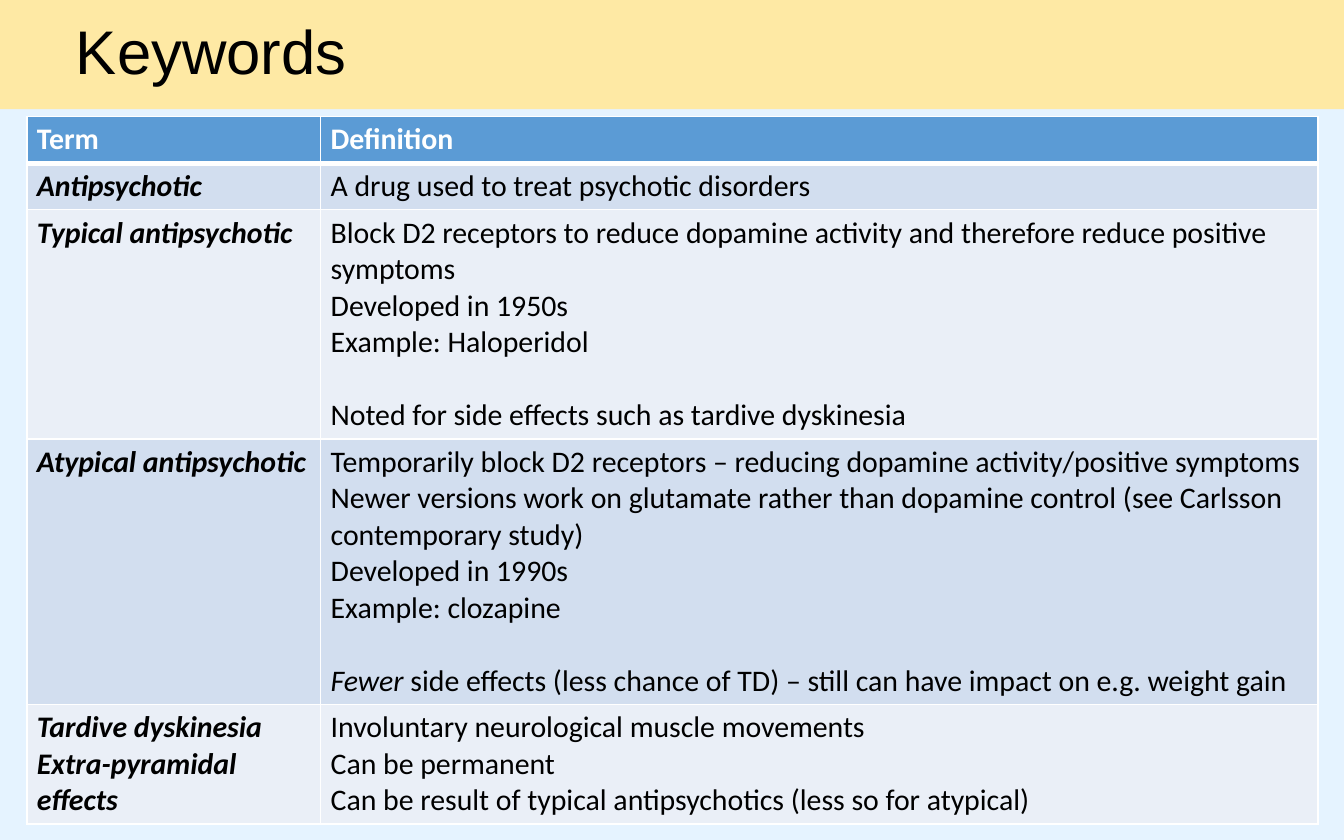
from dataclasses import dataclass

from lxml.etree import SubElement
from pptx import Presentation
from pptx.dml.color import RGBColor
from pptx.enum.text import MSO_ANCHOR as Anchor, MSO_AUTO_SIZE as AutoSize, PP_ALIGN as Align
from pptx.oxml.ns import qn
from pptx.util import Pt


@dataclass(frozen=True)
class Theme:
    background: str = "E5F3FF"
    band: str = "FEE9A4"
    header: str = "5B9BD5"
    rows: tuple = ("D2DEEF", "EAEFF7")
    text: str = "000000"
    light: str = "FFFFFF"
    title_font: str = "Arial"
    body_font: str = "Calibri"
    title_size: float = 33
    body_size: float = 16
    gap: float = 19.5
    border: float = 1
    header_border: float = 3


@dataclass(frozen=True)
class Line:
    text: str
    emphasis: str = ""
    gap: bool = False


THEME = Theme()
SLIDE_WIDTH, SLIDE_HEIGHT = 720, 450
BAND_HEIGHT = 58.5
TABLE_LEFT, TABLE_TOP = 14.4, 62.4
COLUMN_WIDTHS = (157.4, 534.2)
ROW_HEIGHTS = (25, 25, 122.6, 142.2, 64)

HEADINGS = ("Term", "Definition")
KEYWORDS = (
    (
        [Line("Antipsychotic")],
        [Line("A drug used to treat psychotic disorders")],
    ),
    (
        [Line("Typical antipsychotic")],
        [
            Line("Block D2 receptors to reduce dopamine activity and therefore reduce positive symptoms"),
            Line("Developed in 1950s"),
            Line("Example: Haloperidol"),
            Line("Noted for side effects such as tardive dyskinesia", gap=True),
        ],
    ),
    (
        [Line("Atypical antipsychotic")],
        [
            Line("Temporarily block D2 receptors – reducing dopamine activity/positive symptoms"),
            Line("Newer versions work on glutamate rather than dopamine control (see Carlsson contemporary study)"),
            Line("Developed in 1990s"),
            Line("Example: clozapine"),
            Line(
                " side effects (less chance of TD) – still can have impact on e.g. weight gain",
                emphasis="Fewer",
                gap=True,
            ),
        ],
    ),
    (
        [Line("Tardive dyskinesia"), Line("Extra-pyramidal effects")],
        [
            Line("Involuntary neurological muscle movements"),
            Line("Can be permanent"),
            Line("Can be result of typical antipsychotics (less so for atypical)"),
        ],
    ),
)


def color(value):
    return RGBColor.from_string(value)


def paint(fill, value):
    fill.solid()
    fill.fore_color.rgb = color(value)


def format_font(font, name, size, value, bold=False, italic=False):
    font.name = name
    font.size = Pt(size)
    font.color.rgb = color(value)
    font.bold = bold
    font.italic = italic


def add_title(slide, text):
    title = slide.shapes.title
    title.left, title.top = Pt(0), Pt(0)
    title.width, title.height = Pt(SLIDE_WIDTH), Pt(BAND_HEIGHT)
    paint(title.fill, THEME.band)
    title.line.fill.background()
    frame = title.text_frame
    frame.text = text
    frame.auto_size = AutoSize.NONE
    frame.vertical_anchor = Anchor.MIDDLE
    frame.margin_left = Pt(40.7)
    frame.margin_top = frame.margin_bottom = Pt(2.7)
    paragraph = frame.paragraphs[0]
    paragraph.alignment = Align.LEFT
    paragraph.line_spacing = 0.9
    format_font(paragraph.runs[0].font, THEME.title_font, THEME.title_size, THEME.text)


def set_borders(cell, top, bottom):
    properties = cell._tc.get_or_add_tcPr()
    widths = {"a:lnL": THEME.border, "a:lnR": THEME.border, "a:lnT": top, "a:lnB": bottom}
    for position, (tag, width) in enumerate(widths.items()):
        line = SubElement(properties, qn(tag), w=str(Pt(width)))
        fill = SubElement(line, qn("a:solidFill"))
        SubElement(fill, qn("a:srgbClr"), val=THEME.light)
        properties.insert(position, line)


def write_lines(cell, lines, value, bold, italic):
    frame = cell.text_frame
    for index, line in enumerate(lines):
        paragraph = frame.add_paragraph() if index else frame.paragraphs[0]
        if line.gap:
            paragraph.space_before = Pt(THEME.gap)
        for text, emphasized in ((line.emphasis, True), (line.text, italic)):
            if text:
                run = paragraph.add_run()
                run.text = text
                format_font(run.font, THEME.body_font, THEME.body_size, value, bold, emphasized)


def fill_cell(cell, lines, fill, value, bold, italic, top, bottom):
    cell.margin_left = cell.margin_right = Pt(5.4)
    cell.margin_top = cell.margin_bottom = Pt(2.7)
    cell.vertical_anchor = Anchor.TOP
    paint(cell.fill, fill)
    set_borders(cell, top, bottom)
    write_lines(cell, lines, value, bold, italic)


def add_keyword_table(slide):
    table = slide.shapes.add_table(
        len(ROW_HEIGHTS), len(COLUMN_WIDTHS), Pt(TABLE_LEFT), Pt(TABLE_TOP),
        Pt(sum(COLUMN_WIDTHS)), Pt(sum(ROW_HEIGHTS)),
    ).table
    for column, width in zip(table.columns, COLUMN_WIDTHS):
        column.width = Pt(width)
    for row, height in zip(table.rows, ROW_HEIGHTS):
        row.height = Pt(height)
    for column, heading in enumerate(HEADINGS):
        fill_cell(table.cell(0, column), [Line(heading)], THEME.header, THEME.light,
                  True, False, THEME.border, THEME.header_border)
    for row, entry in enumerate(KEYWORDS, start=1):
        top = THEME.header_border if row == 1 else THEME.border
        for column, lines in enumerate(entry):
            is_term = column == 0
            fill_cell(table.cell(row, column), lines, THEME.rows[(row - 1) % 2], THEME.text,
                      is_term, is_term, top, THEME.border)


def main():
    presentation = Presentation()
    presentation.slide_width = Pt(SLIDE_WIDTH)
    presentation.slide_height = Pt(SLIDE_HEIGHT)
    slide = presentation.slides.add_slide(presentation.slide_layouts.get_by_name("Title Only"))
    paint(slide.background.fill, THEME.background)
    add_title(slide, "Keywords")
    add_keyword_table(slide)
    presentation.save("out.pptx")


if __name__ == "__main__":
    main()
